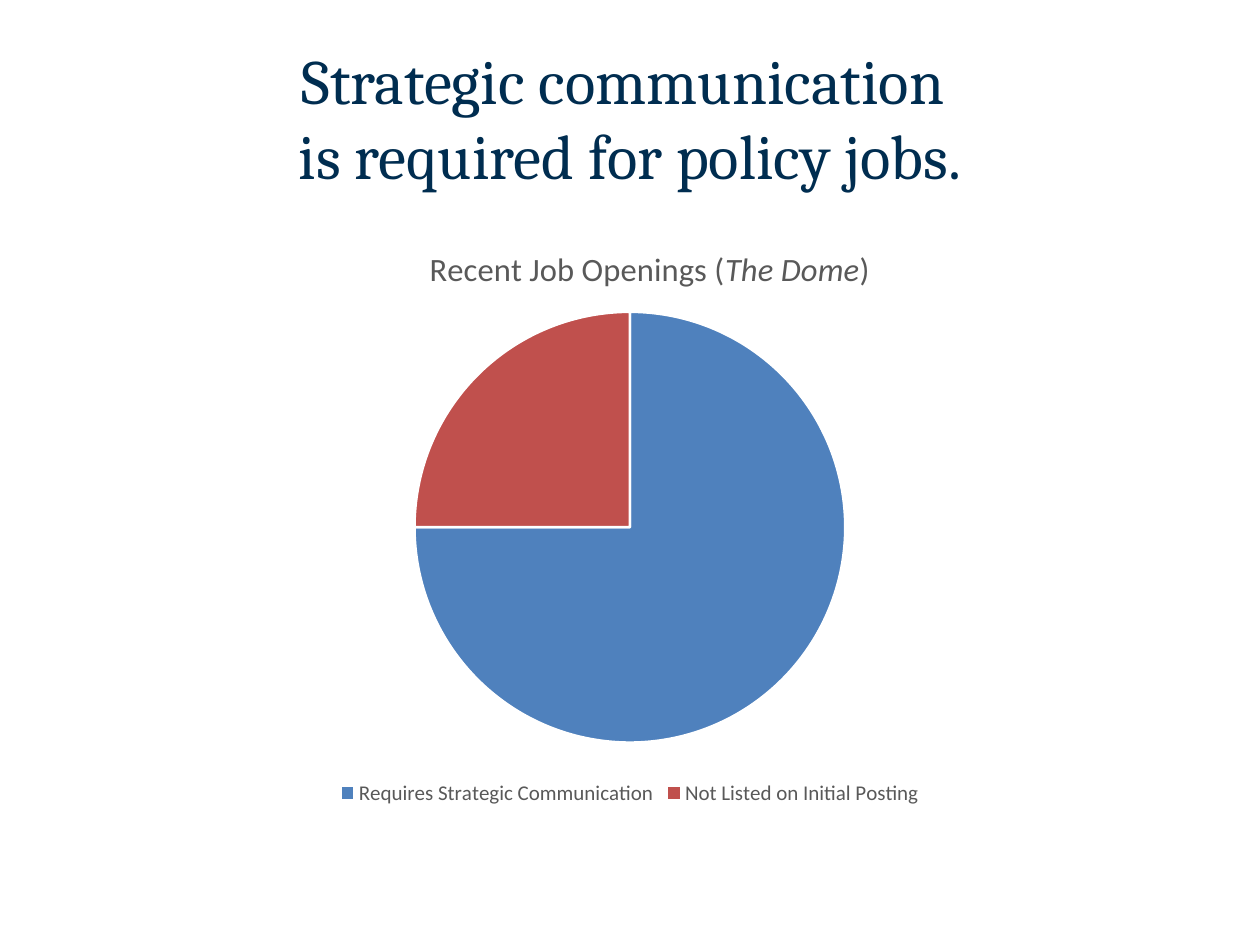
from dataclasses import dataclass

from lxml.etree import SubElement
from pptx import Presentation
from pptx.chart.data import CategoryChartData
from pptx.dml.color import RGBColor
from pptx.enum.chart import XL_CHART_TYPE as ChartType, XL_LEGEND_POSITION as LegendPosition
from pptx.enum.text import MSO_ANCHOR as Anchor, PP_ALIGN as Align
from pptx.oxml.ns import qn
from pptx.util import Inches, Pt


@dataclass(frozen=True)
class Theme:
    """Colours, fonts and type sizes of the slide."""
    navy: str = "002D50"
    grey: str = "595959"
    white: str = "FFFFFF"
    heading_font: str = "Cambria"
    chart_font: str = "Calibri"
    heading_size: float = 36
    chart_title_size: float = 18.6
    legend_size: float = 12


@dataclass(frozen=True)
class Box:
    """A place given as shares of the width and height around it."""
    left: float
    top: float
    width: float
    height: float


@dataclass(frozen=True)
class Slice:
    """One share of the job openings."""
    label: str
    percent: int
    colour: str


THEME = Theme()
SLIDE_WIDTH, SLIDE_HEIGHT = Inches(10), Inches(7.5)
HEADING_BOX = Box(0.05, 0.04, 0.9, 0.167)
CHART_BOX = Box(0.05, 0.233, 0.9, 0.625)
PIE_BOX = Box(0.31, 0.15, 0.38, 0.74)
OPENINGS = (
    Slice("Requires Strategic Communication", 75, "4F81BD"),
    Slice("Not Listed on Initial Posting", 25, "C0504D"),
)


def place(box: Box) -> tuple[int, int, int, int]:
    """Turn shares of the slide into lengths."""
    return (int(box.left * SLIDE_WIDTH), int(box.top * SLIDE_HEIGHT),
            int(box.width * SLIDE_WIDTH), int(box.height * SLIDE_HEIGHT))


def style_font(font, *, face: str, size: float, colour: str, italic: bool = False) -> None:
    """Format one font."""
    font.name, font.size = face, Pt(size)
    font.bold, font.italic = False, italic
    font.color.rgb = RGBColor.from_string(colour)


def add_text(paragraph, text: str, **style) -> None:
    """Append formatted text, with a line break at each newline."""
    for index, line in enumerate(text.split("\n")):
        if index:
            paragraph.add_line_break()
        run = paragraph.add_run()
        run.text = line
        style_font(run.font, **style)


def set_layout(parent, **values) -> None:
    """Give a chart part a manual layout."""
    layout = parent.find(qn("c:layout"))
    if layout is None:
        layout = parent.makeelement(qn("c:layout"))
        tx = parent.find(qn("c:tx"))
        parent.insert(0 if tx is None else parent.index(tx) + 1, layout)
    manual = SubElement(layout, qn("c:manualLayout"))
    for name, value in values.items():
        SubElement(manual, qn(f"c:{name}")).set("val", str(value))


def add_heading(slide) -> None:
    """Fill the title placeholder."""
    heading = slide.shapes.title
    heading.left, heading.top, heading.width, heading.height = place(HEADING_BOX)
    heading.text_frame.vertical_anchor = Anchor.MIDDLE
    paragraph = heading.text_frame.paragraphs[0]
    paragraph.alignment = Align.CENTER
    add_text(paragraph, "Strategic communication \nis required for policy jobs.",
             face=THEME.heading_font, size=THEME.heading_size, colour=THEME.navy)


def add_openings_chart(slide) -> None:
    """Draw the pie of job openings."""
    data = CategoryChartData()
    data.categories = [opening.label for opening in OPENINGS]
    data.add_series("Series 1", [opening.percent for opening in OPENINGS])
    chart = slide.shapes.add_chart(ChartType.PIE, *place(CHART_BOX), data).chart
    chart.font.name = THEME.chart_font

    chart.has_title = True
    caption = chart.chart_title.text_frame.paragraphs[0]
    for text, italic in (("Recent Job Openings (", False), ("The Dome", True), (")", False)):
        add_text(caption, text, face=THEME.chart_font, size=THEME.chart_title_size,
                 colour=THEME.grey, italic=italic)
    set_layout(chart.chart_title._element, xMode="edge", yMode="edge", x=0.32, y=0.04)

    plot = chart.plots[0]
    plot.vary_by_categories = True
    set_layout(plot._element.getparent(), layoutTarget="inner", xMode="edge", yMode="edge",
               x=PIE_BOX.left, y=PIE_BOX.top, w=PIE_BOX.width, h=PIE_BOX.height)
    for index, opening in enumerate(OPENINGS):
        wedge = plot.series[0].points[index].format
        wedge.fill.solid()
        wedge.fill.fore_color.rgb = RGBColor.from_string(opening.colour)
        wedge.line.color.rgb = RGBColor.from_string(THEME.white)
        wedge.line.width = Pt(1.5)

    chart.has_legend = True
    chart.legend.position = LegendPosition.BOTTOM
    chart.legend.include_in_layout = False
    style_font(chart.legend.font, face=THEME.chart_font, size=THEME.legend_size,
               colour=THEME.grey)


def main() -> None:
    """Build and save the slide."""
    deck = Presentation()
    deck.slide_width, deck.slide_height = SLIDE_WIDTH, SLIDE_HEIGHT
    slide = deck.slides.add_slide(deck.slide_layouts[5])
    add_heading(slide)
    add_openings_chart(slide)
    deck.save("out.pptx")


if __name__ == "__main__":
    main()
